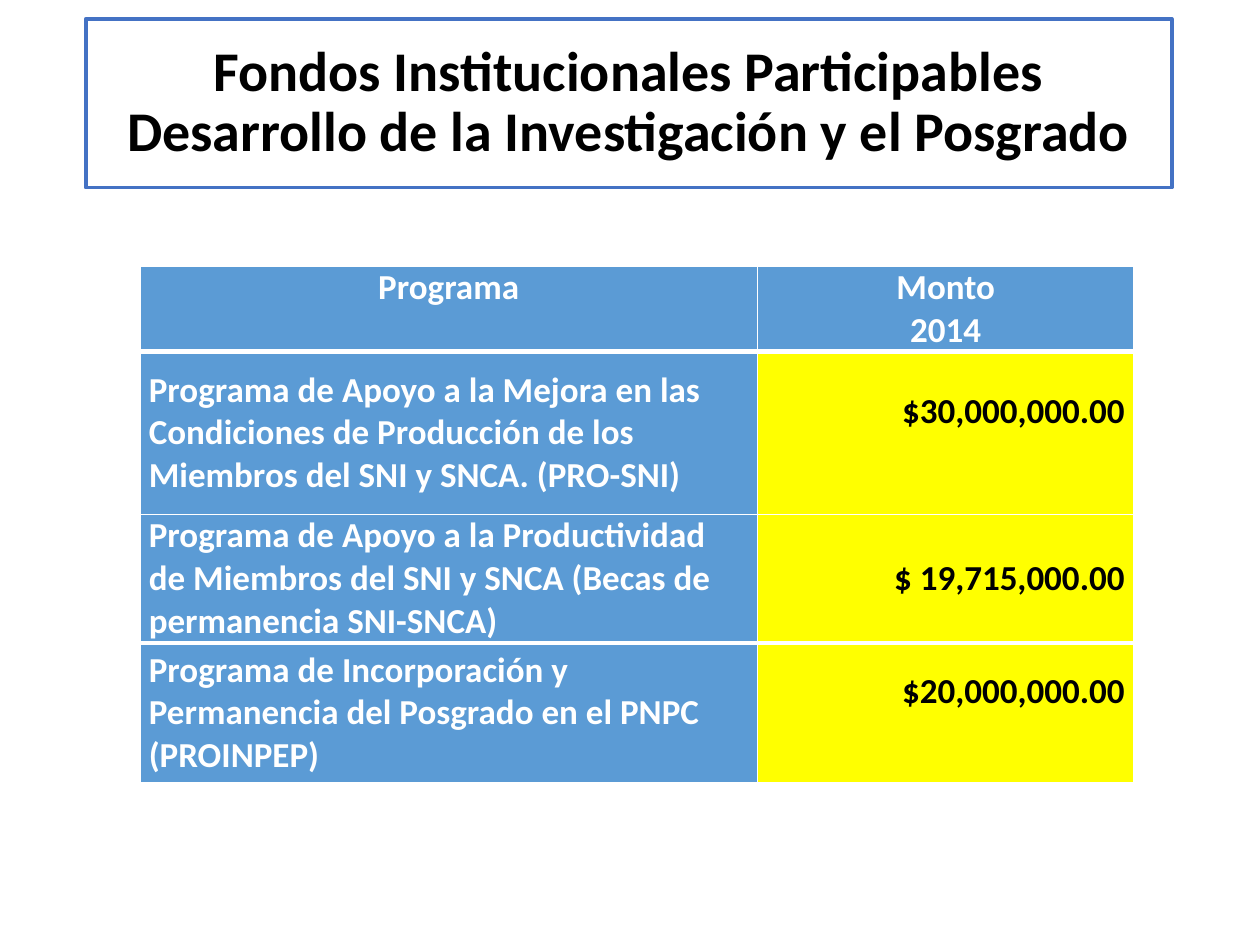
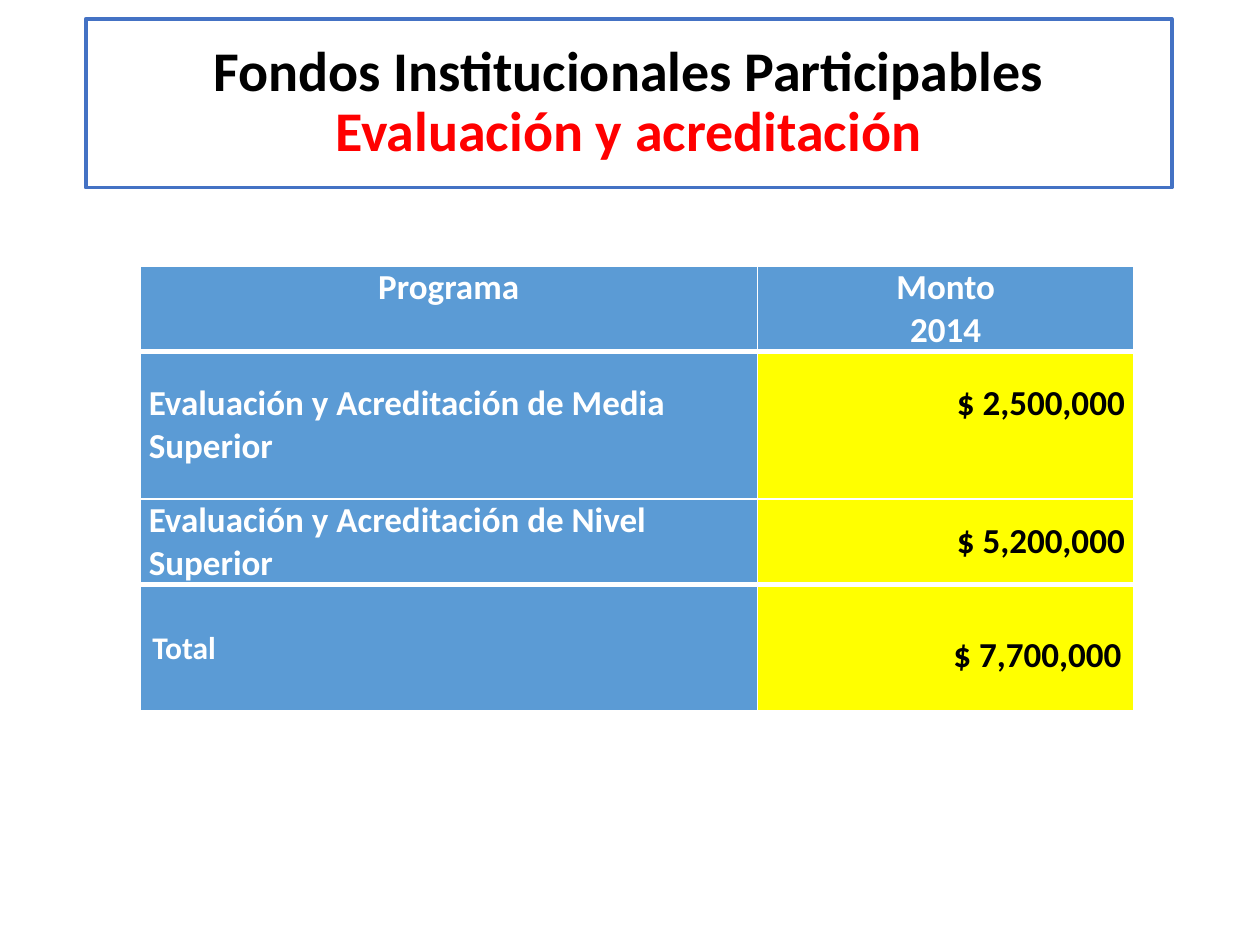
import pptx
import pptx.dml.color
import pptx.enum.text
import pptx.util
from lxml import etree
from pptx.oxml.ns import qn

Cm, Pt = pptx.util.Cm, pptx.util.Pt
ALIGN, ANCHOR = pptx.enum.text.PP_ALIGN, pptx.enum.text.MSO_ANCHOR

BLACK, WHITE, RED = "000000", "FFFFFF", "FF0000"
BLUE, YELLOW, FRAME = "5B9BD5", "FFFF00", "4472C4"
FUND = "Fondos Institucionales Participables"
HEADINGS = ("Programa", "Monto\n2014")
COLUMN_WIDTHS = (12.45, 7.59)
HEADER_HEIGHT = 1.7

TIGHT = {"margin_left": Cm(0.18), "margin_right": Cm(0.18),
         "margin_top": 0, "margin_bottom": 0}
HEADER = {**TIGHT, "vertical_anchor": ANCHOR.TOP}
CENTERED = {**TIGHT, "vertical_anchor": ANCHOR.MIDDLE}
RAISED = {**CENTERED, "margin_bottom": Cm(0.86)}
TOTAL = {"margin_left": Cm(0.25), "margin_right": Cm(0.25),
         "margin_top": Cm(0.9), "margin_bottom": 0, "vertical_anchor": ANCHOR.TOP}
TOTAL_AMOUNT = {**TOTAL, "margin_top": Cm(0.99)}


def rgb(value):
    """Return the colour for a hex string."""
    return pptx.dml.color.RGBColor.from_string(value)


def apply(target, values):
    """Set every attribute named in a dict of format values."""
    for name, value in values.items():
        setattr(target, name, value)


class Deck:
    """Hold the shared style and the current slide."""

    def __init__(self):
        """Start an empty presentation of 4:3 slides."""
        self.show = pptx.Presentation()
        apply(self.show, {"slide_width": Cm(25.4), "slide_height": Cm(19.05)})
        self.slide = None

    def style(self, font, size, color):
        """Format a font in the bold face of the deck."""
        apply(font, {"name": "Calibri", "size": Pt(size), "bold": True})
        font.color.rgb = rgb(color)

    def add_slide(self, subject, subject_color):
        """Add a slide with the framed two-line title."""
        self.slide = self.show.slides.add_slide(self.show.slide_layouts[5])
        title = self.slide.shapes.title
        apply(title, {"left": Cm(1.73), "top": Cm(0.38),
                      "width": Cm(21.89), "height": Cm(3.4)})
        apply(title.text_frame, {"vertical_anchor": ANCHOR.MIDDLE, "word_wrap": True,
                                 "auto_size": pptx.enum.text.MSO_AUTO_SIZE.NONE})
        title.line.color.rgb = rgb(FRAME)
        title.line.width = Pt(2.25)
        heading = title.text_frame.paragraphs[0]
        apply(heading, {"alignment": ALIGN.CENTER, "line_spacing": 0.9})
        fund = heading.add_run()
        fund.text = FUND
        self.style(fund.font, 32, BLACK)
        heading.add_line_break()
        topic = heading.add_run()
        topic.text = subject
        self.style(topic.font, 32, subject_color)

    def cell(self, cell, text, fill, color, alignment, layout, size=20):
        """Fill one table cell with formatted text."""
        cell.text = text
        apply(cell, layout)
        cell.fill.solid()
        cell.fill.fore_color.rgb = rgb(fill)
        for paragraph in cell.text_frame.paragraphs:
            paragraph.alignment = alignment
            for run in paragraph.runs:
                self.style(run.font, size, color)

    def borders(self, cell, top, bottom):
        """Draw the white borders of a cell."""
        properties = cell._tc.get_or_add_tcPr()
        edges = {"a:lnL": 1, "a:lnR": 1, "a:lnT": top, "a:lnB": bottom}
        for position, (tag, width) in enumerate(edges.items()):
            line = etree.Element(qn(tag), w=str(Pt(width)))
            fill = etree.SubElement(line, qn("a:solidFill"))
            etree.SubElement(fill, qn("a:srgbClr"), val=WHITE)
            properties.insert(position, line)

    def funding_table(self, programs):
        """Add the table of programs and their amounts."""
        heights = [HEADER_HEIGHT] + [program[0] for program in programs]
        table = self.slide.shapes.add_table(
            len(heights), len(COLUMN_WIDTHS), Cm(2.82), Cm(5.36),
            Cm(sum(COLUMN_WIDTHS)), Cm(sum(heights))).table
        for column, width in zip(table.columns, COLUMN_WIDTHS):
            column.width = Cm(width)
        for row, height in zip(table.rows, heights):
            row.height = Cm(height)
        for column, heading in enumerate(HEADINGS):
            self.cell(table.cell(0, column), heading, BLUE, WHITE, ALIGN.CENTER, HEADER)
        for row, (_, name, amount, name_layout, amount_layout) in enumerate(programs, 1):
            name_size = 18 if name_layout is TOTAL else 20
            self.cell(table.cell(row, 0), name, BLUE, WHITE, ALIGN.LEFT,
                      name_layout, name_size)
            self.cell(table.cell(row, 1), amount, YELLOW, BLACK, ALIGN.RIGHT,
                      amount_layout)
        thick_edges = (1, len(programs))
        for row, table_row in enumerate(table.rows):
            top, bottom = (3 if edge in thick_edges else 1 for edge in (row, row + 1))
            for cell in table_row.cells:
                self.borders(cell, top, bottom)


def main():
    """Build both funding slides and save them."""
    deck = Deck()
    deck.add_slide("Desarrollo de la Investigación y el Posgrado", BLACK)
    deck.funding_table([
        (3.28, "Programa de Apoyo a la Mejora en las Condiciones de Producción "
         "de los Miembros del SNI y SNCA. (PRO-SNI)",
         "$30,000,000.00", CENTERED, RAISED),
        (2.58, "Programa de Apoyo a la Productividad de Miembros del SNI y SNCA "
         "(Becas de permanencia SNI-SNCA)",
         "$ 19,715,000.00", CENTERED, CENTERED),
        (2.82, "Programa de Incorporación y Permanencia del Posgrado en el PNPC "
         "(PROINPEP)",
         "$20,000,000.00", CENTERED, RAISED),
    ])
    deck.add_slide("Evaluación y acreditación", RED)
    deck.funding_table([
        (2.97, "Evaluación y Acreditación de Media Superior",
         "$ 2,500,000", CENTERED, RAISED),
        (1.73, "Evaluación y Acreditación de Nivel Superior",
         "$ 5,200,000", CENTERED, CENTERED),
        (2.54, "Total", "$ 7,700,000", TOTAL, TOTAL_AMOUNT),
    ])
    deck.show.save("out.pptx")


if __name__ == "__main__":
    main()
